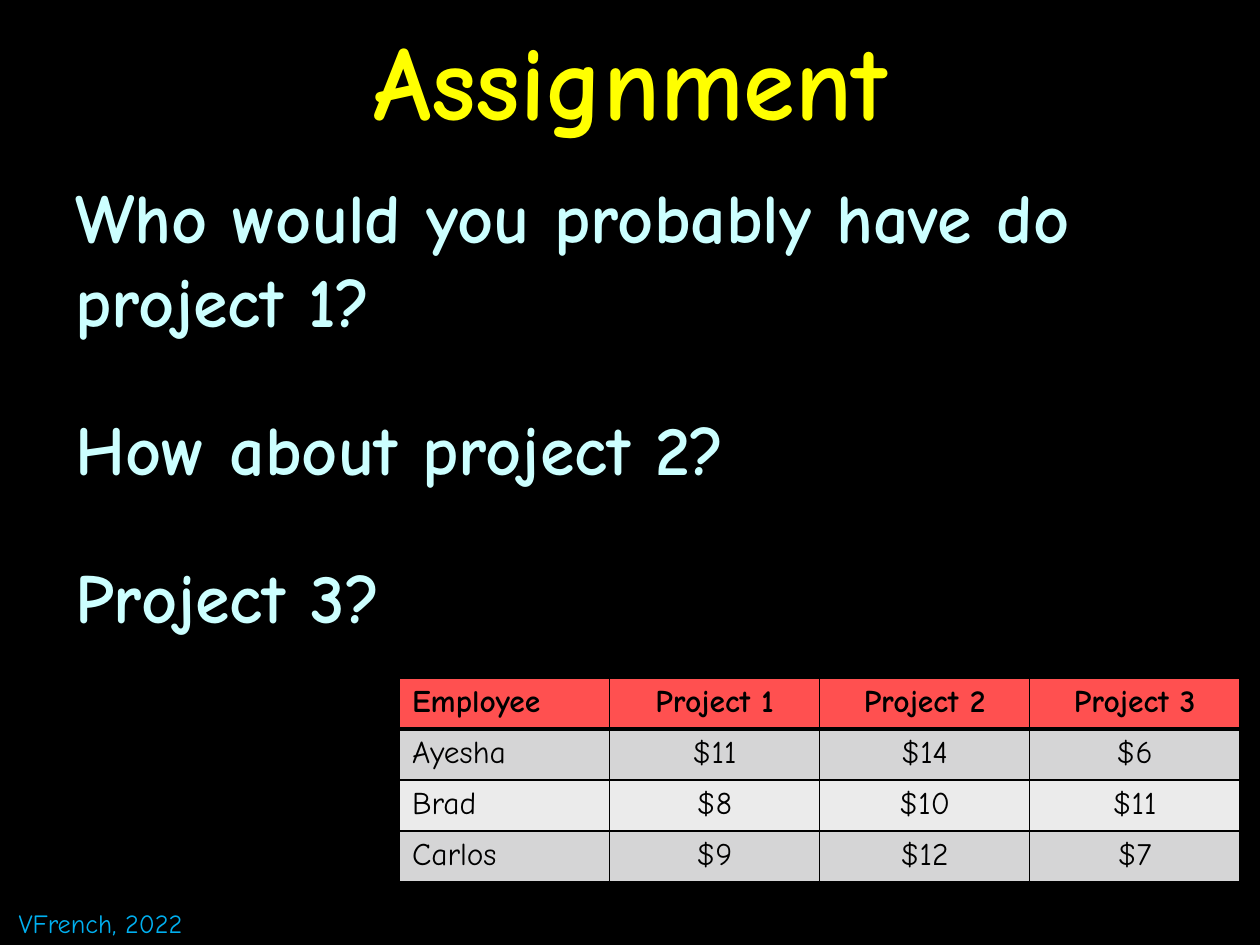
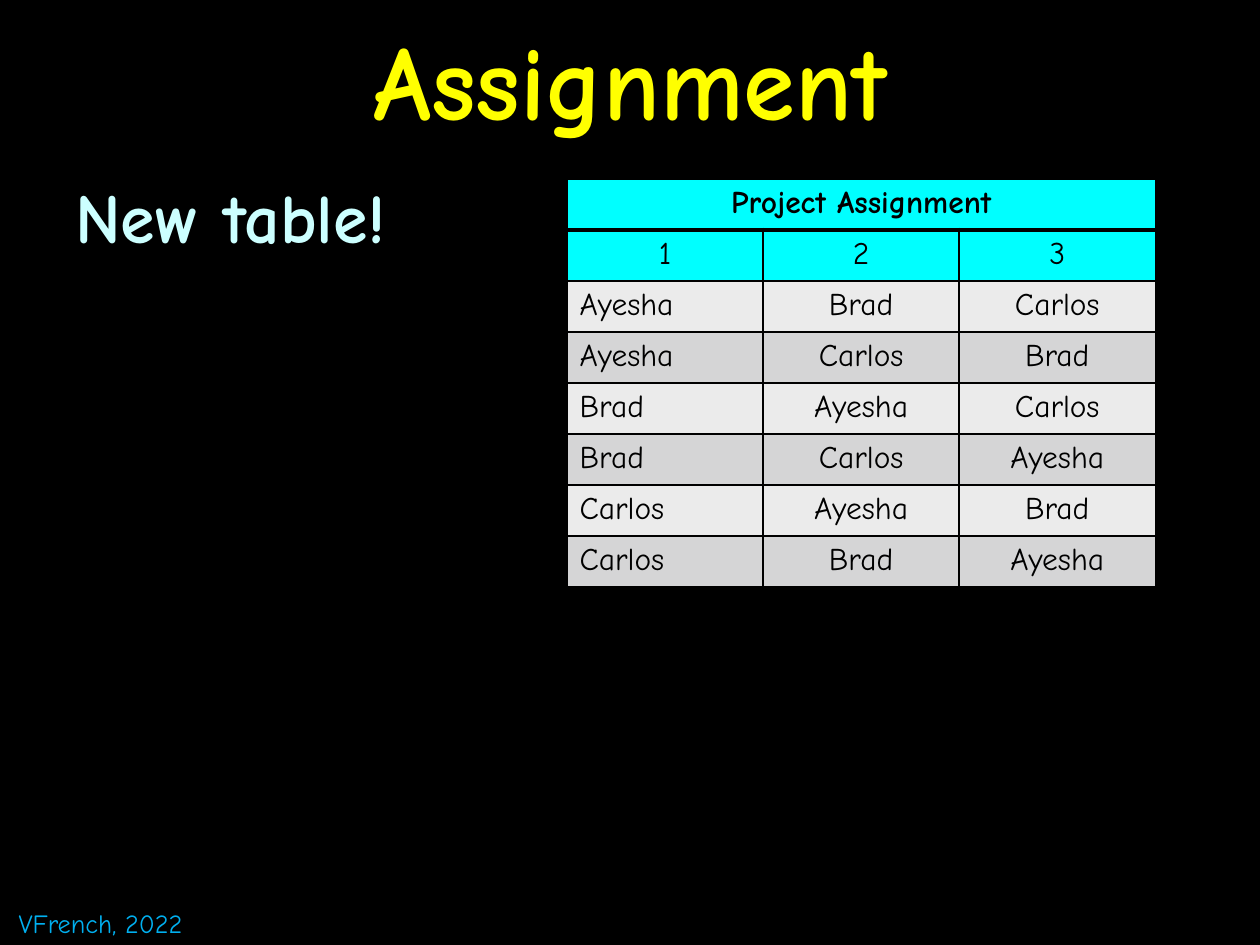
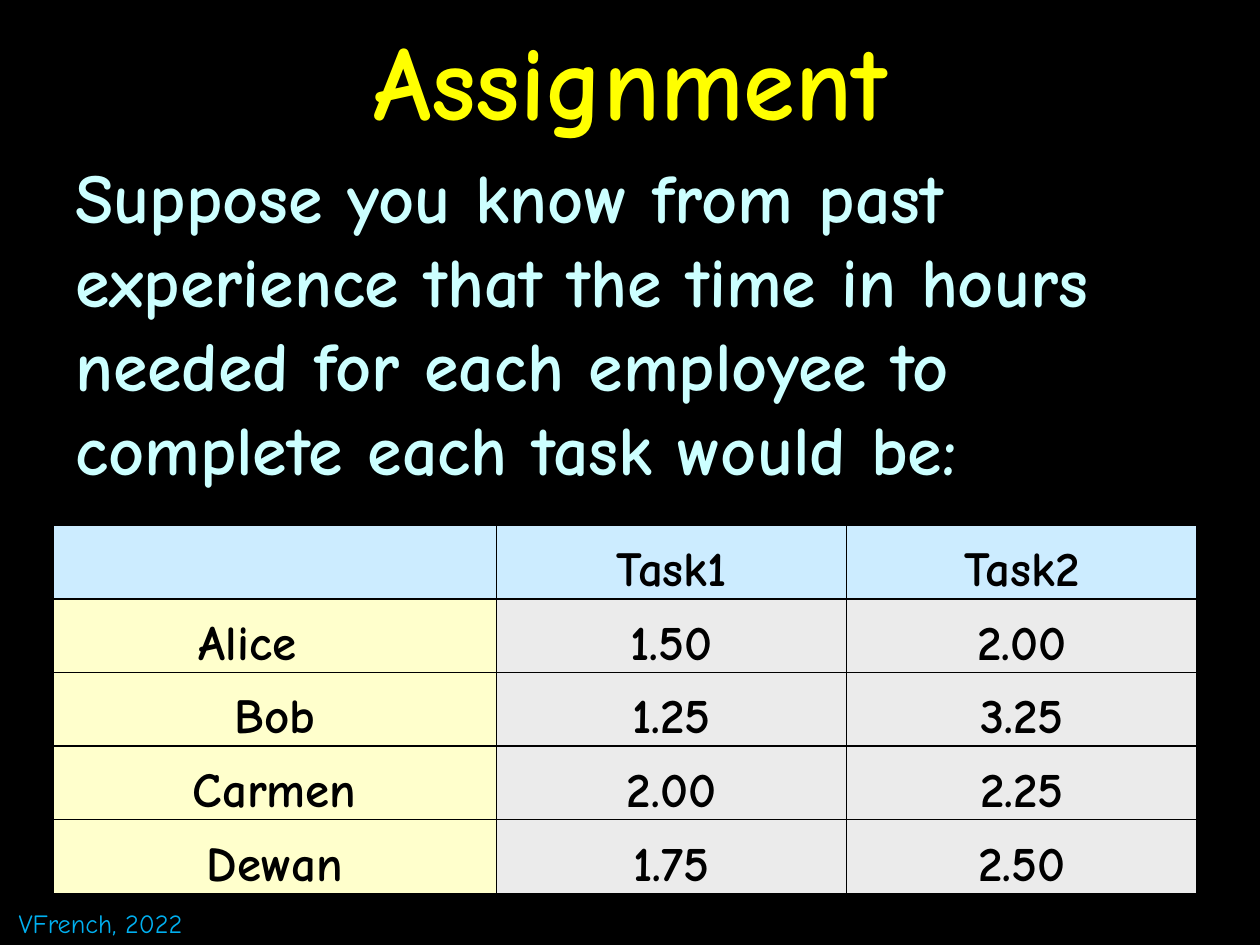
from dataclasses import dataclass

from lxml import etree
from pptx import Presentation
from pptx.dml.color import RGBColor
from pptx.enum.text import MSO_ANCHOR, MSO_AUTO_SIZE, PP_ALIGN
from pptx.oxml.ns import qn
from pptx.util import Inches, Pt

LEFT, CENTER = PP_ALIGN.LEFT, PP_ALIGN.CENTER
TOP, MIDDLE, BOTTOM = MSO_ANCHOR.TOP, MSO_ANCHOR.MIDDLE, MSO_ANCHOR.BOTTOM
GROW, FIXED = MSO_AUTO_SIZE.SHAPE_TO_FIT_TEXT, MSO_AUTO_SIZE.NONE
TITLE_ONLY = 5


@dataclass(frozen=True)
class Theme:
    font: str = "Comic Neue"
    black: str = "000000"
    title: str = "FFFF00"
    body: str = "CCFFFF"
    footer: str = "00B0F0"
    red: str = "FF5050"
    cyan: str = "00FFFF"
    pale_blue: str = "CCECFF"
    pale_yellow: str = "FFFFCC"
    dark_band: str = "D5D5D6"
    light_band: str = "EBEBEB"
    title_size: int = 60
    body_size: int = 40
    big_cell_size: int = 28
    cell_size: int = 18
    footer_size: int = 15
    question_gap: float = 36.5
    border: int = 1
    header_border: int = 3


class Deck:
    def __init__(self, theme):
        self.theme = theme
        self.prs = Presentation()
        self.prs.slide_width, self.prs.slide_height = Inches(10), Inches(7.5)
        background = self.prs.slide_master.background.fill
        background.solid()
        background.fore_color.rgb = RGBColor.from_string(theme.black)
        self.slide = None

    def start(self, title):
        """Add a slide with its title and the shared footer."""
        t = self.theme
        self.slide = self.prs.slides.add_slide(self.prs.slide_layouts[TITLE_ONLY])
        heading = self.slide.shapes.title
        heading.left, heading.top = Inches(0), Inches(0)
        heading.width, heading.height = Inches(10), Inches(1.25)
        frame = heading.text_frame
        frame.text = title
        frame.auto_size = FIXED
        frame.vertical_anchor = MIDDLE
        self.style(frame.paragraphs[0], t.title_size, t.title, True, CENTER)
        self.text(["VFrench, 2022"], (0.05, 7.15, 1.7, 0.35),
                  t.footer_size, t.footer).auto_size = GROW

    def style(self, paragraph, size, color, bold=False, align=LEFT):
        paragraph.alignment = align
        for run in paragraph.runs:
            run.font.name = self.theme.font
            run.font.size = Pt(size)
            run.font.bold = bold
            run.font.color.rgb = RGBColor.from_string(color)

    def text(self, lines, box, size, color, bold=False, gap=0):
        """Add a text box with one paragraph a line."""
        frame = self.slide.shapes.add_textbox(*map(Inches, box)).text_frame
        frame.word_wrap = True
        frame.text = "\n".join(lines)
        for i, paragraph in enumerate(frame.paragraphs):
            self.style(paragraph, size, color, bold)
            paragraph.space_before = Pt(gap if i else 0)
        return frame

    def body(self, lines, top=1.33):
        t = self.theme
        self.text(lines, (0.5, top, 9, 6.17), t.body_size, t.body, True, t.question_gap)

    def borders(self, cell, top, bottom):
        widths = {"L": self.theme.border, "R": self.theme.border, "T": top, "B": bottom}
        properties = cell._tc.get_or_add_tcPr()
        for side, width in widths.items():
            line = etree.SubElement(properties, qn(f"a:ln{side}"), w=str(Pt(width)))
            fill = etree.SubElement(line, qn("a:solidFill"))
            etree.SubElement(fill, qn("a:srgbClr"), val=self.theme.black)

    def table(self, rows, box, look, widths=None, header_border=None):
        """Add a table; look(row, column) gives fill, size, bold and alignment."""
        t = self.theme
        header_border = header_border or t.border
        left, top, width, height = map(Inches, box)
        table = self.slide.shapes.add_table(
            len(rows), len(rows[0]), left, top, width, height).table
        table.first_row = table.horz_banding = False
        for column, column_width in zip(table.columns, widths or []):
            column.width = Inches(column_width)
        for r, row in enumerate(rows):
            for c, value in enumerate(row):
                cell = table.cell(r, c)
                fill, size, bold, align = look(r, c)
                self.borders(cell, header_border if r == 1 else t.border,
                             header_border if r == 0 else t.border)
                cell.fill.solid()
                cell.fill.fore_color.rgb = RGBColor.from_string(fill)
                cell.text = value
                self.style(cell.text_frame.paragraphs[0], size, t.black, bold, align)
        return table


def cost_slide(deck):
    t = deck.theme

    def look(r, c):
        fill = t.red if r == 0 else t.dark_band if r % 2 else t.light_band
        return fill, t.cell_size, r == 0, CENTER if c else LEFT

    costs = [
        ["Employee", "Project 1", "Project 2", "Project 3"],
        ["Ayesha", "$11", "$14", "$6"],
        ["Brad", "$8", "$10", "$11"],
        ["Carlos", "$9", "$12", "$7"],
    ]
    deck.start("Assignment")
    deck.body(["Who would you probably have do project 1?",
               "How about project 2?", "Project 3?"])
    deck.table(costs, (3.17, 5.38, 6.67, 1.62), look, header_border=t.header_border)


def orders_slide(deck):
    t = deck.theme

    def look(r, c):
        fill = t.cyan if r < 2 else t.dark_band if r % 2 else t.light_band
        return fill, t.cell_size, r == 0, CENTER if c or r < 2 else LEFT

    orders = [
        ["Project Assignment", "", ""],
        ["1", "2", "3"],
        ["Ayesha", "Brad", "Carlos"],
        ["Ayesha", "Carlos", "Brad"],
        ["Brad", "Ayesha", "Carlos"],
        ["Brad", "Carlos", "Ayesha"],
        ["Carlos", "Ayesha", "Brad"],
        ["Carlos", "Brad", "Ayesha"],
    ]
    deck.start("Assignment")
    deck.body(["New table!"])
    table = deck.table(orders, (4.5, 1.42, 4.67, 3.24), look,
                       header_border=t.header_border)
    table.cell(0, 0).merge(table.cell(0, 2))


def hours_slide(deck):
    t = deck.theme

    def look(r, c):
        fill = t.pale_blue if r == 0 else t.light_band if c else t.pale_yellow
        return fill, t.big_cell_size, True, CENTER

    hours = [
        ["", "Task1", "Task2"],
        ["Alice", "1.50", "2.00"],
        ["Bob", "1.25", "3.25"],
        ["Carmen", "2.00", "2.25"],
        ["Dewan", "1.75", "2.50"],
    ]
    deck.start("Assignment")
    deck.body(["Suppose you know from past experience that the time in hours "
               "needed for each employee to complete each task would be:"], top=1.17)
    table = deck.table(hours, (0.42, 4.17, 9.08, 2.92), look, widths=[3.52, 2.78, 2.78])
    for cell in table.iter_cells():
        cell.vertical_anchor = BOTTOM
        cell.margin_left = cell.margin_right = cell.margin_top = Inches(0.01)
        cell.margin_bottom = Inches(0)
    # Alice sits left of the column centre
    table.cell(1, 0).margin_right = Inches(0.44)
    table.cell(0, 0).vertical_anchor = TOP


def main():
    deck = Deck(Theme())
    cost_slide(deck)
    orders_slide(deck)
    hours_slide(deck)
    deck.prs.save("out.pptx")


if __name__ == "__main__":
    main()
